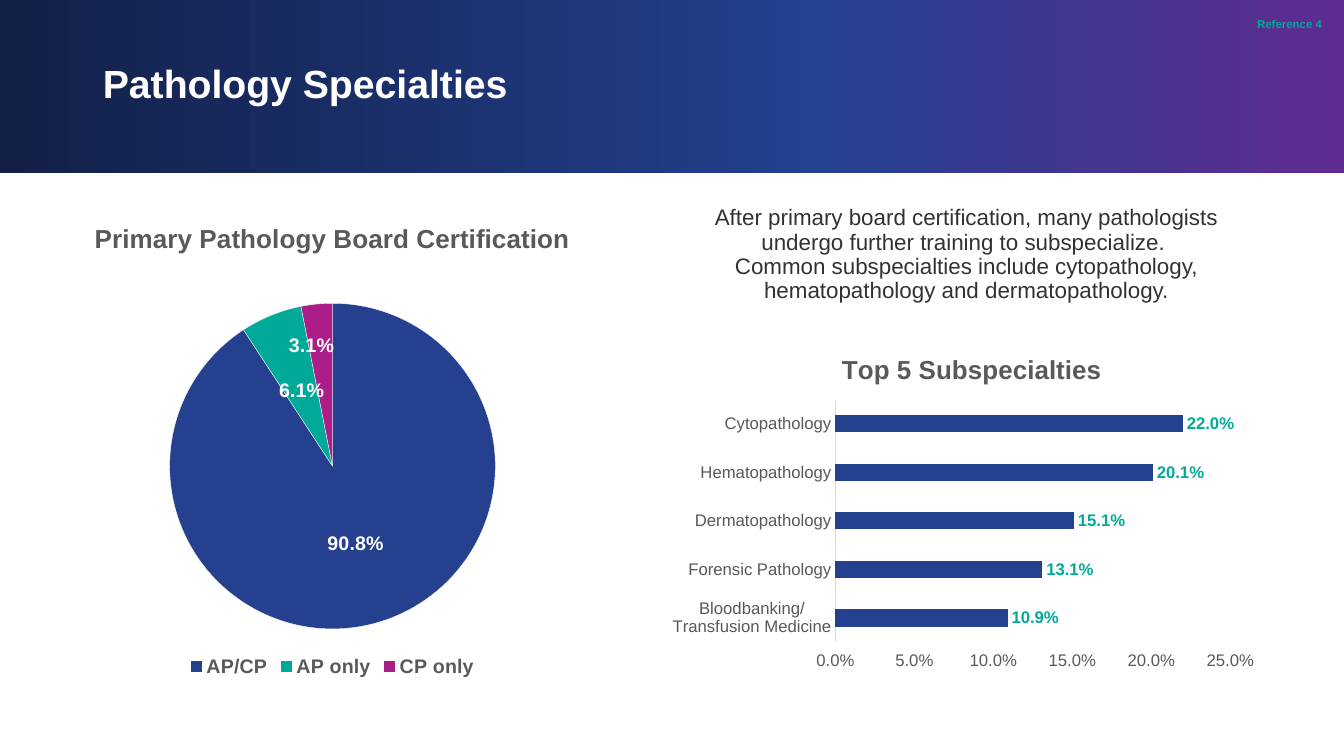
import copy
from dataclasses import dataclass
from typing import Any

import lxml.etree
import pptx
import pptx.chart.data
import pptx.dml.color
import pptx.enum.chart
import pptx.enum.shapes
import pptx.enum.text
import pptx.oxml.ns
import pptx.util

Inches = pptx.util.Inches
Pt = pptx.util.Pt
Align = pptx.enum.text.PP_ALIGN
Anchor = pptx.enum.text.MSO_ANCHOR
Kind = pptx.enum.chart.XL_CHART_TYPE
Spot = pptx.enum.chart.XL_LABEL_POSITION
Tick = pptx.enum.chart.XL_TICK_MARK
qn = pptx.oxml.ns.qn

HUES = {
    "navy": "122048", "blue": "24408F", "plum": "5E2C91", "teal": "00A998",
    "pink": "AB1E89", "gray": "595959", "rule": "D9D9D9", "ink": "323232",
    "white": "FFFFFF",
}
FACE = "Arial"
SHARE = "0.0%"


@dataclass
class Graph:
    kind: Any
    box: tuple[float, ...]
    title: str
    head: tuple[float, ...]
    plot: tuple[float, ...]
    data: dict[str, float]
    spot: Any
    size: float
    hue: str


@dataclass
class Note:
    box: tuple[float, ...]
    text: str
    size: float
    hue: str
    bold: bool
    align: Any


GRAPHS = [
    Graph(Kind.PIE, (0.23, 2, 6.13, 4.76), "Primary Pathology Board Certification",
          (0.108, 0.031), (0.237, 0.212, 0.527, 0.679),
          {"AP/CP": 0.908, "AP only": 0.061, "CP only": 0.031},
          Spot.CENTER, 14, "white"),
    Graph(Kind.BAR_CLUSTERED, (6.67, 3.33, 5.89, 3.38), "Top 5 Subspecialties",
          (0.274, 0.035), (0.271, 0.188, 0.668, 0.712),
          {"Cytopathology": 0.22, "Hematopathology": 0.201, "Dermatopathology": 0.151,
           "Forensic Pathology": 0.131, "Bloodbanking/Transfusion Medicine": 0.109},
          Spot.OUTSIDE_END, 12, "teal"),
]
BODY = Note(
    (6.75, 2, 5.67, 1.2),
    "After primary board certification, many pathologists undergo further training to "
    "subspecialize. \vCommon subspecialties include cytopathology, hematopathology and "
    "dermatopathology.", 16, "ink", False, Align.CENTER)
CITE = Note((11.21, 0.12, 2, 0.28), "Reference 4", 14, "teal", True, Align.RIGHT)


def tint(name: str) -> Any:
    return pptx.dml.color.RGBColor.from_string(HUES[name])


def style(font: Any, size: float, hue: str, bold: bool = False) -> None:
    font.name, font.size, font.bold = FACE, Pt(size), bold
    font.color.rgb = tint(hue)


def place(node: Any, index: int, spots: tuple[float, ...], edge: bool = True) -> None:
    for old in node.findall(qn("c:layout")):
        node.remove(old)
    frame = lxml.etree.Element(qn("c:layout"))
    inner = lxml.etree.SubElement(frame, qn("c:manualLayout"))
    parts = []
    if len(spots) == 4:
        parts.append(("layoutTarget", "inner"))
    if edge:
        parts += [("xMode", "edge"), ("yMode", "edge")]
    parts += zip("xywh", map(str, spots))
    for tag, value in parts:
        lxml.etree.SubElement(inner, qn(f"c:{tag}")).set("val", value)
    node.insert(index, frame)


def fill_text(shape: Any, note: Note) -> None:
    shape.left, shape.top, shape.width, shape.height = map(Inches, note.box)
    frame = shape.text_frame
    frame.text = note.text
    frame.word_wrap = True
    line = frame.paragraphs[0]
    line.alignment, line.line_spacing = note.align, 0.9
    for run in line.runs:
        style(run.font, note.size, note.hue, note.bold)


def add_note(slide: Any, note: Note) -> Any:
    shape = slide.shapes.add_textbox(*map(Inches, note.box))
    fill_text(shape, note)
    return shape


def add_band(slide: Any) -> None:
    band = slide.shapes.add_shape(pptx.enum.shapes.MSO_SHAPE.RECTANGLE,
                                  0, 0, Inches(13.33), Inches(1.72))
    band.shadow.inherit = False
    band.line.fill.background()
    band.fill.gradient()
    band.fill.gradient_angle = 180
    first = next(band.element.iter(qn("a:gs")))
    first.addnext(copy.deepcopy(first))
    marks = [(0, "plum"), (0.39, "blue"), (1, "navy")]
    for stop, (point, hue) in zip(band.fill.gradient_stops, marks):
        stop.position = point
        stop.color.rgb = tint(hue)
    slide.shapes.title.element.addprevious(band.element)


def add_graph(slide: Any, graph: Graph) -> Any:
    data = pptx.chart.data.CategoryChartData(number_format=SHARE)
    data.categories = list(graph.data)
    data.add_series("Series 1", list(graph.data.values()))
    chart = slide.shapes.add_chart(graph.kind, *map(Inches, graph.box), data).chart
    style(chart.font, 12, "gray")
    chart.has_legend = False
    head = chart.chart_title
    head.include_in_layout = False
    head.text_frame.text = graph.title
    style(head.text_frame.paragraphs[0].runs[0].font, 18.6, "gray", True)
    place(chart.element.find(".//" + qn("c:title")), 1, graph.head)
    place(chart.element.find(".//" + qn("c:plotArea")), 0, graph.plot)
    tags = chart.plots[0].series[0].data_labels
    tags.show_value = True
    tags.number_format, tags.number_format_is_linked = SHARE, False
    tags.position = graph.spot
    style(tags.font, graph.size, graph.hue, True)
    return chart


def dress_pie(chart: Any) -> None:
    chart.plots[0].vary_by_categories = True
    slices = chart.plots[0].series[0].points
    for index, hue in enumerate(("blue", "teal", "pink")):
        part = slices[index].format
        part.fill.solid()
        part.fill.fore_color.rgb = tint(hue)
        part.line.color.rgb = tint("white")
        part.line.width = Pt(0.25)
    tag = slices[2].data_label
    style(tag.font, 14, "white", True)
    tag.position = Spot.CENTER
    place(chart.element.find(".//" + qn("c:dLbl")), 1, (-0.021, -0.083), False)
    chart.has_legend = True
    chart.legend.position = pptx.enum.chart.XL_LEGEND_POSITION.BOTTOM
    chart.legend.include_in_layout = False
    style(chart.legend.font, 14, "gray", True)


def dress_bars(chart: Any) -> None:
    plot = chart.plots[0]
    plot.gap_width, plot.vary_by_categories = 182, False
    fill = plot.series[0].format.fill
    fill.solid()
    fill.fore_color.rgb = tint("blue")
    names, scale = chart.category_axis, chart.value_axis
    for axis in (names, scale):
        axis.major_tick_mark = axis.minor_tick_mark = Tick.NONE
        axis.has_major_gridlines = False
        style(axis.tick_labels.font, 12, "gray")
    names.reverse_order = True
    names.format.line.color.rgb = tint("rule")
    names.format.line.width = Pt(0.75)
    scale.minimum_scale, scale.maximum_scale, scale.major_unit = 0, 0.25, 0.05
    scale.tick_label_position = pptx.enum.chart.XL_TICK_LABEL_POSITION.HIGH
    scale.tick_labels.number_format = SHARE
    scale.tick_labels.number_format_is_linked = False
    scale.format.line.fill.background()


def main() -> None:
    deck = pptx.Presentation()
    deck.slide_width, deck.slide_height = Inches(13.33), Inches(7.5)
    slide = deck.slides.add_slide(deck.slide_layouts.get_by_name("Title Only"))
    title = slide.shapes.title
    fill_text(title, Note((0.92, 0.11, 11.5, 1.49), "Pathology Specialties",
                          28, "white", True, Align.LEFT))
    title.text_frame.vertical_anchor = Anchor.MIDDLE
    add_band(slide)
    for graph, dress in zip(GRAPHS, (dress_pie, dress_bars)):
        dress(add_graph(slide, graph))
    add_note(slide, BODY)
    cite = add_note(slide, CITE)
    next(cite.element.iter(qn("a:rPr"))).set("baseline", "30000")
    deck.save("out.pptx")


if __name__ == "__main__":
    main()
